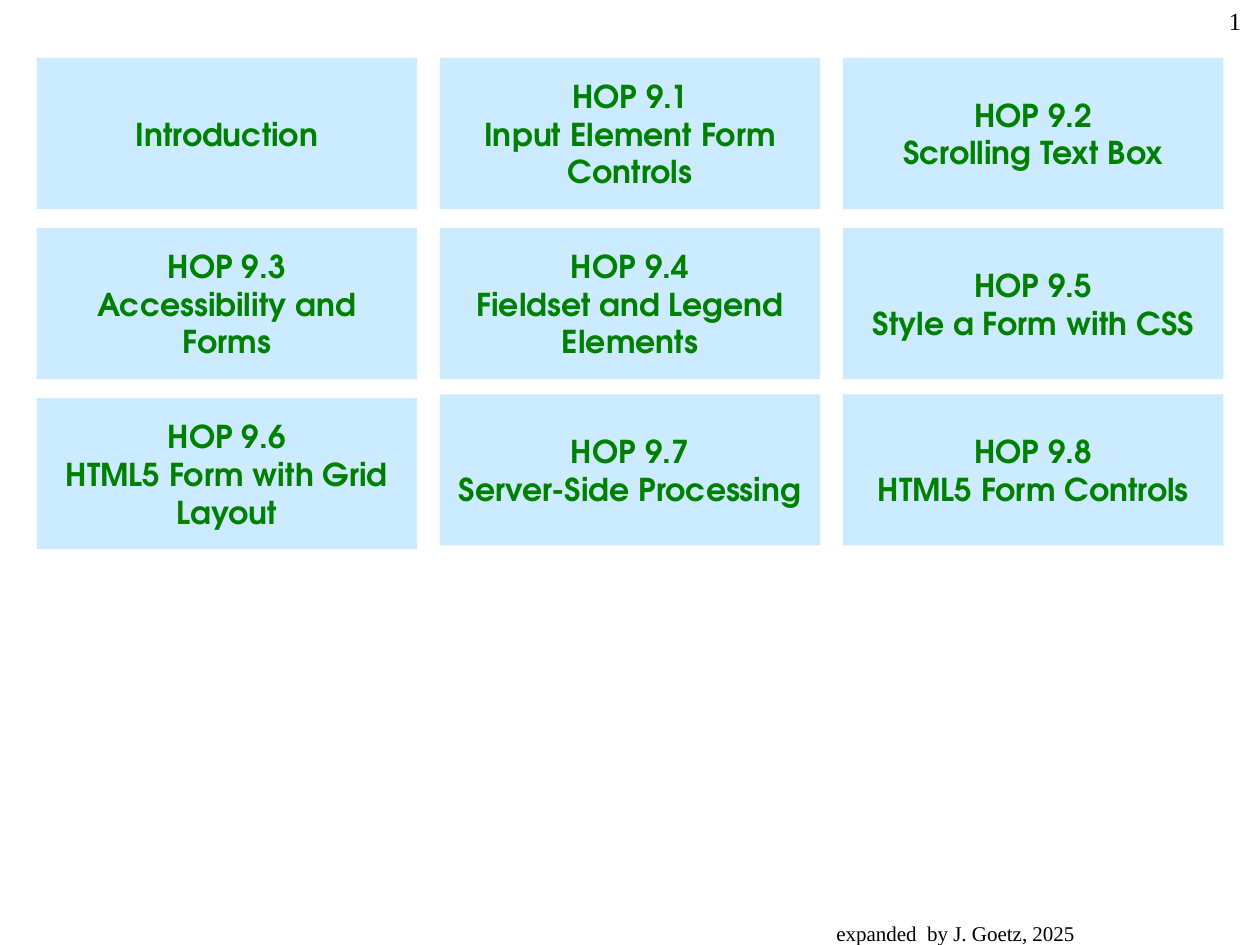
from pptx import Presentation
from pptx.dml.color import RGBColor
from pptx.enum.shapes import MSO_SHAPE
from pptx.enum.text import MSO_ANCHOR, PP_ALIGN
from pptx.util import Inches, Pt

RECTANGLE = MSO_SHAPE.RECTANGLE
MIDDLE = MSO_ANCHOR.MIDDLE
CENTER, RIGHT = PP_ALIGN.CENTER, PP_ALIGN.RIGHT

TOPICS = [
    ["Introduction"],
    ["HOP 9.1", "Input Element Form Controls"],
    ["HOP 9.2", "Scrolling Text Box"],
    ["HOP 9.3", "Accessibility and Forms"],
    ["HOP 9.4", "Fieldset and Legend Elements"],
    ["HOP 9.5", "Style a Form with CSS"],
    ["HOP 9.6", "HTML5 Form with Grid Layout"],
    ["HOP 9.7", "Server-Side Processing"],
    ["HOP 9.8", "HTML5 Form Controls"],
]
RAISED = {"HOP 9.7": 0.03, "HOP 9.8": 0.03}


def color(value):
    """Turn a hex string into a colour."""
    return RGBColor.from_string(value)


class TopicSlide:
    """Hold the style and the current slide."""

    columns = 3
    left, top = 0.29, 0.46
    column_step, row_step = 3.2, 1.35
    tile_width, tile_height = 3.02, 1.2
    tile_fill = "CCEBFF"
    tile_font = {"name": "TeX Gyre Adventor", "size": Pt(18), "bold": True}
    tile_ink = "008000"
    note_font = "Times New Roman"
    note_ink = "000000"

    def __init__(self, deck):
        """Add a blank slide to the deck."""
        self.slide = deck.slides.add_slide(deck.slide_layouts[6])

    def fill_text(self, frame, lines, align, font, ink):
        """Set one paragraph for each line."""
        frame.word_wrap = True
        for index, line in enumerate(lines):
            para = frame.add_paragraph() if index else frame.paragraphs[0]
            para.alignment = align
            span = para.add_run()
            span.text = line
            for name, value in font.items():
                setattr(span.font, name, value)
            span.font.color.rgb = color(ink)

    def tile(self, index, lines):
        """Draw a topic tile in its grid cell."""
        row, column = divmod(index, self.columns)
        left = self.left + column * self.column_step
        top = self.top + row * self.row_step - RAISED.get(lines[0], 0)
        box = self.slide.shapes.add_shape(
            RECTANGLE, Inches(left), Inches(top),
            Inches(self.tile_width), Inches(self.tile_height))
        box.shadow.inherit = False
        box.fill.solid()
        box.fill.fore_color.rgb = color(self.tile_fill)
        box.line.fill.background()
        box.text_frame.vertical_anchor = MIDDLE
        self.fill_text(box.text_frame, lines, CENTER, self.tile_font, self.tile_ink)

    def note(self, text, place, align, size):
        """Place a small line of plain text."""
        box = self.slide.shapes.add_textbox(*map(Inches, place))
        font = {"name": self.note_font, "size": Pt(size)}
        self.fill_text(box.text_frame, [text], align, font, self.note_ink)


def main():
    """Build and save the deck."""
    deck = Presentation()
    deck.slide_width, deck.slide_height = Inches(10), Inches(7.5)
    page = TopicSlide(deck)
    page.note("expanded  by J. Goetz, 2025", (6, 7.26, 3.17, 0.24), CENTER, 12)
    page.note("1", (7.92, 0, 2.03, 0.5), RIGHT, 14)
    for index, lines in enumerate(TOPICS):
        page.tile(index, lines)
    deck.save("out.pptx")


if __name__ == "__main__":
    main()
